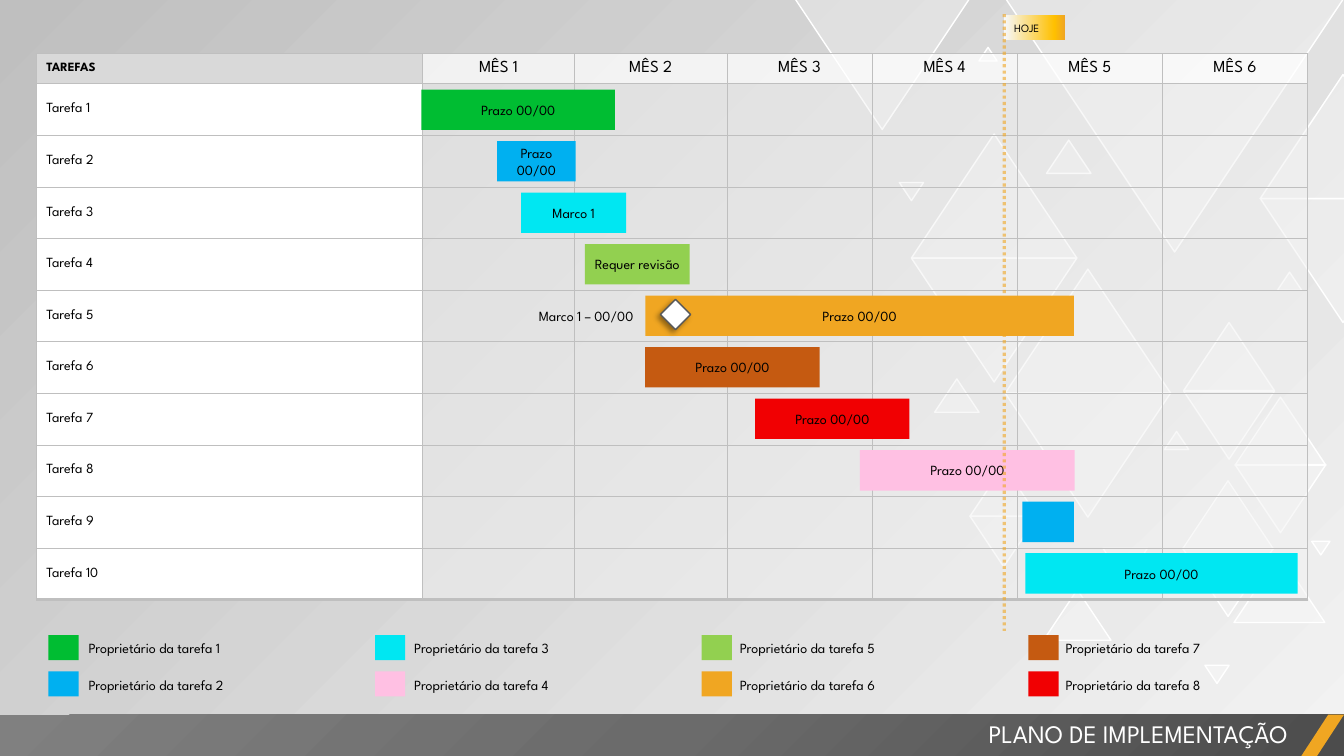
"""Build a six-month implementation plan slide with a Gantt table, task bars and an owner legend."""
from lxml import etree
from pptx import Presentation
from pptx.dml.color import RGBColor
from pptx.enum.dml import MSO_LINE
from pptx.enum.shapes import MSO_CONNECTOR, MSO_SHAPE
from pptx.enum.text import MSO_ANCHOR, MSO_AUTO_SIZE, PP_ALIGN
from pptx.oxml import parse_xml
from pptx.oxml.ns import nsdecls, qn
from pptx.util import Inches, Pt

RECT, TRIANGLE, DIAMOND = MSO_SHAPE.RECTANGLE, MSO_SHAPE.ISOSCELES_TRIANGLE, MSO_SHAPE.DIAMOND
SLANT = MSO_SHAPE.PARALLELOGRAM
LEFT, CENTER, RIGHT = PP_ALIGN.LEFT, PP_ALIGN.CENTER, PP_ALIGN.RIGHT
TOP, MIDDLE = MSO_ANCHOR.TOP, MSO_ANCHOR.MIDDLE
FONT = "League Spartan"
BLACK, WHITE, GRID, ORANGE = "000000", "FFFFFF", "BFBFBF", "F0A622"
GREEN, BLUE, CYAN, LIME = "00BD32", "00B0F0", "00E7F2", "92D050"
BROWN, RED, PINK = "C55A11", "F10002", "FFC0E3"

TITLE = "PLANO DE IMPLEMENTAÇÃO"
MONTHS = [f"MÊS {n}" for n in range(1, 7)]
TASKS = [f"Tarefa {n}" for n in range(1, 11)]
DUE = "Prazo 00/00"
BARS = [
    (4.18, 1.92, GREEN, DUE), (4.93, 0.78, BLUE, DUE), (5.17, 1.04, CYAN, "Marco 1"),
    (5.8, 1.04, LIME, "Requer revisão"), (6.4, 4.25, ORANGE, DUE), (6.4, 1.73, BROWN, DUE),
    (7.49, 1.53, RED, DUE), (8.53, 2.13, PINK, DUE), (10.14, 0.51, BLUE, ""),
    (10.17, 2.7, CYAN, DUE),
]
OWNERS = [GREEN, BLUE, CYAN, PINK, LIME, ORANGE, BROWN, RED]
COLS = [3.83, 1.51, 1.51, 1.44, 1.44, 1.44, 1.44]
TABLE = (0.36, 0.53, 12.61, 5.42)
HEAD_H = 0.3
BAR_TOP, BAR_STEP, BAR_H = 0.89, 0.511, 0.4
TRIANGLES = [
    (9.04, 1.33, 1.64, 0), (9.04, 2.56, 1.64, 180), (9.97, 2.67, 1.64, 0),
    (9.97, 3.9, 1.64, 180), (9.97, -0.02, 3.36, 180), (12.24, 5.5, 0.9, 0),
    (11.73, 5.44, 0.9, 180), (11.73, 4.77, 0.9, 0), (11.74, 3.2, 0.9, 0),
    (11.74, 3.88, 0.9, 180), (12.25, 3.94, 0.9, 0), (12.25, 4.61, 0.9, 180),
    (10.35, 5.85, 0.67, 0), (9.62, 5.12, 0.67, 180), (9.62, 4.62, 0.67, 0),
    (12.5, 0.74, 1.64, 0), (12.5, 1.97, 1.64, 180), (10.94, 5.44, 0.44, 180),
    (9.27, 3.76, 0.44, 0), (11.55, 4.28, 0.24, 0), (11.95, 6.6, 0.24, 180),
    (8.92, 1.81, 0.24, 180), (12.67, 2.7, 0.24, 0), (9.71, 0.47, 0.18, 0),
    (13.01, 5.37, 0.18, 180), (10.38, 1.39, 0.44, 0), (7.88, -0.02, 1.74, 180),
]


def rgb(color):
    return RGBColor.from_string(color)


def fade(el, percent):
    clr = el.find(".//" + qn("a:srgbClr"))
    etree.SubElement(clr, qn("a:alpha"), val=str(percent * 1000))


def gradient(el, stops, direction):
    gs = "".join(
        f'<a:gs pos="{pos * 1000}"><a:srgbClr val="{color}"/></a:gs>' for pos, color in stops)
    grad = parse_xml(f'<a:gradFill {nsdecls("a")} rotWithShape="1"><a:gsLst>{gs}</a:gsLst>'
                     f'{direction}</a:gradFill>')
    solid = el.find(".//" + qn("a:solidFill"))
    solid.getparent().replace(solid, grad)
    return grad


def write(tf, text, size, color=BLACK, align=LEFT, anchor=MIDDLE, bold=False):
    tf.word_wrap = True
    tf.vertical_anchor = anchor
    p = tf.paragraphs[0]
    p.alignment = align
    r = p.add_run()
    r.text = text
    r.font.size, r.font.name, r.font.bold = Pt(size), FONT, bold
    r.font.color.rgb = rgb(color)


def shape(parent, kind, box, color, line=None):
    sp = parent.add_shape(kind, *map(Inches, box))
    sp.shadow.inherit = False
    sp.fill.solid()
    sp.fill.fore_color.rgb = rgb(color)
    if line:
        sp.line.color.rgb = rgb(line)
        sp.line.width = Pt(1)
    else:
        sp.line.fill.background()
    return sp


def textbox(parent, box, text, size, **style):
    tf = parent.add_textbox(*map(Inches, box)).text_frame
    write(tf, text, size, **style)
    return tf


def style_cell(cell, color, opacity, bottom):
    cell.fill.solid()
    cell.fill.fore_color.rgb = rgb(color)
    tcPr = cell._tc.get_or_add_tcPr()
    if opacity < 100:
        fade(tcPr, opacity)
    for i, (side, width) in enumerate([("L", 0.5), ("R", 0.5), ("T", 0.5), ("B", bottom)]):
        tcPr.insert(i, parse_xml(
            f'<a:ln{side} {nsdecls("a")} w="{Pt(width)}"><a:solidFill><a:srgbClr val="{GRID}"/>'
            f'</a:solidFill><a:prstDash val="solid"/></a:ln{side}>'))


def backdrop(s):
    s.background.fill.solid()
    s.background.fill.fore_color.rgb = rgb(GRID)
    grad = gradient(s._element, [(0, "F2F2F2"), (100, GRID)], '<a:lin ang="13500000" scaled="0"/>')
    fade(grad, 40)
    group = s.shapes.add_group_shape()
    for x, y, w, turn in TRIANGLES:
        sp = shape(group.shapes, TRIANGLE, (x, y, w, w * 0.75), WHITE, WHITE)
        sp.rotation = turn
        fade(sp._element.spPr, 30)
    footer = shape(s.shapes, RECT, (0, 7.09, 13.33, 0.42), "6B6B6B")
    gradient(footer._element.spPr, [(0, "4C4C4C"), (50, "6B6B6B"), (100, "808080")],
             '<a:path path="circle"><a:fillToRect l="100000" t="100000"/></a:path>')
    accent = shape(s.shapes, SLANT, (12.9, 7.09, 0.43, 0.42), ORANGE)
    accent.adjustments[0] = 0.652
    tf = textbox(s.shapes, (5.25, 7.08, 7.62, 0.4), TITLE, 18,
                 color=WHITE, align=RIGHT, anchor=TOP)
    tf.auto_size = MSO_AUTO_SIZE.SHAPE_TO_FIT_TEXT


def schedule(s):
    rows = len(TASKS) + 1
    tbl = s.shapes.add_table(rows, len(COLS), *map(Inches, TABLE)).table
    tbl.first_row = tbl.horz_banding = False
    for col, width in zip(tbl.columns, COLS):
        col.width = Inches(width)
    for i, row in enumerate(tbl.rows):
        row.height = Inches((TABLE[3] - HEAD_H) / len(TASKS) if i else HEAD_H)
        for j, cell in enumerate(row.cells):
            if j == 0:
                color, opacity = (WHITE if i else "D9D9D9"), 100
            else:
                color, opacity = ("F2F2F2", 50) if i else (WHITE, 75)
            style_cell(cell, color, opacity, 3 if i == rows - 1 else 0.5)
            cell.vertical_anchor = MIDDLE
    write(tbl.cell(0, 0).text_frame, "TAREFAS", 9, bold=True)
    for j, month in enumerate(MONTHS, 1):
        write(tbl.cell(0, j).text_frame, month, 12, align=CENTER)
    for i, task in enumerate(TASKS, 1):
        write(tbl.cell(i, 0).text_frame, task, 10)
    for i, (x, w, color, label) in enumerate(BARS):
        bar = shape(s.shapes, RECT, (x, BAR_TOP + i * BAR_STEP, w, BAR_H), color)
        if label:
            write(bar.text_frame, label, 10, align=CENTER)


def legend(s):
    for i, color in enumerate(OWNERS):
        col, row = divmod(i, 2)
        y = 6.3 + row * 0.36
        shape(s.shapes, RECT, (0.48 + col * 3.24, y, 0.3, 0.25), color)
        tf = textbox(s.shapes, (0.78 + col * 3.23, y, 2.4, 0.27),
                     f"Proprietário da tarefa {i + 1}", 10, anchor=TOP)
        tf.auto_size = MSO_AUTO_SIZE.SHAPE_TO_FIT_TEXT


def markers(s):
    today = s.shapes.add_group_shape().shapes
    flag = shape(today, RECT, (9.96, 0.15, 0.6, 0.25), ORANGE)
    gradient(flag._element.spPr, [(0, "F6F8FC"), (83, "FFC000"), (100, ORANGE)],
             '<a:lin ang="0" scaled="0"/>')
    write(flag.text_frame, "HOJE", 8)
    line = today.add_connector(MSO_CONNECTOR.STRAIGHT, *map(Inches, (9.96, 0.14, 9.96, 6.26)))
    line.line.color.rgb = rgb(ORANGE)
    line.line.width = Pt(2.25)
    line.line.dash_style = MSO_LINE.ROUND_DOT
    spPr = line._element.spPr
    fade(spPr, 60)
    etree.SubElement(spPr, qn("a:effectLst"))
    milestone = shape(s.shapes, DIAMOND, (6.55, 2.97, 0.3, 0.3), WHITE, "595959")
    effects = milestone._element.spPr.find(qn("a:effectLst"))
    effects.append(parse_xml(
        f'<a:outerShdw {nsdecls("a")} blurRad="{Pt(4)}" dist="{Pt(3)}" dir="8100000" algn="tr" '
        f'rotWithShape="0"><a:srgbClr val="{BLACK}"><a:alpha val="40000"/></a:srgbClr>'
        '</a:outerShdw>'))
    textbox(s.shapes, (4.21, 2.93, 2.17, 0.4), "Marco 1 – 00/00", 10, align=RIGHT)


def main():
    prs = Presentation()
    prs.slide_width, prs.slide_height = Inches(13.33), Inches(7.5)
    s = prs.slides.add_slide(prs.slide_layouts[6])
    for build in (backdrop, schedule, legend, markers):
        build(s)
    prs.save("out.pptx")


if __name__ == "__main__":
    main()
